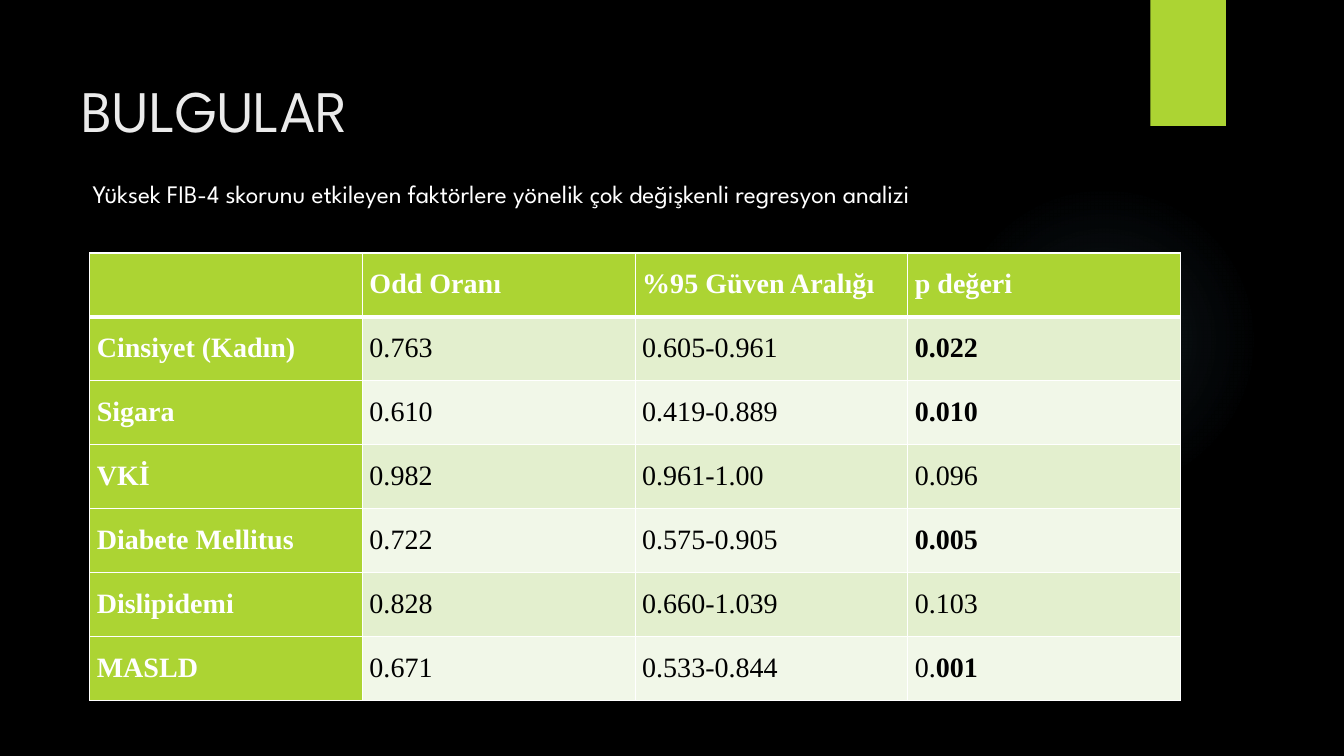
import pptx
import pptx.util
import pptx.dml.color
import pptx.enum.shapes
import pptx.enum.text
import pptx.oxml
import pptx.oxml.ns

Inches = pptx.util.Inches
SHAPES = pptx.enum.shapes.MSO_SHAPE
ALIGN = pptx.enum.text.PP_ALIGN
ANCHOR = pptx.enum.text.MSO_ANCHOR
NS = pptx.oxml.ns.nsdecls("a")

COLORS = {
    "back": "000000",
    "lime": "ACD433",
    "glow": "7AC4F0",
    "title": "EBEBEB",
    "white": "FFFFFF",
    "ink": "000000",
    "odd": "E3EFCE",
    "even": "F1F7E8",
}
SANS = "League Spartan"
SERIF = "Times New Roman"

HEAD = ["", "Odd Oranı", "%95 Güven Aralığı", "p değeri"]
ROWS = [
    ["Cinsiyet (Kadın)", "0.763", "0.605-0.961", "*0.022"],
    ["Sigara", "0.610", "0.419-0.889", "*0.010"],
    ["VKİ", "0.982", "0.961-1.00", "0.096"],
    ["Diabete Mellitus", "0.722", "0.575-0.905", "*0.005"],
    ["Dislipidemi", "0.828", "0.660-1.039", "0.103"],
    ["MASLD", "0.671", "0.533-0.844", "0.*001"],
]


def color(name):
    return pptx.dml.color.RGBColor.from_string(COLORS[name])


def write(frame, text, font=SANS, size=18, ink="white", bold=False,
          align=ALIGN.LEFT, line=None):
    para = frame.paragraphs[0]
    para.alignment = align
    if line:
        para.line_spacing = line
    for pos, part in enumerate(text.split("*")):
        if part:
            run = para.add_run()
            run.text = part
            run.font.name = font
            run.font.size = pptx.util.Pt(size)
            run.font.bold = bold or pos > 0
            run.font.color.rgb = color(ink)


def add_shape(slide, kind, box):
    shape = slide.shapes.add_shape(kind, *map(Inches, box))
    shape.shadow.inherit = False
    shape.line.fill.background()
    return shape


def add_glow(slide, box):
    glow = add_shape(slide, SHAPES.OVAL, box)
    glow.fill.background()
    stops = "".join(
        f'<a:gs pos="{pos * 1000}"><a:srgbClr val="{COLORS["glow"]}">'
        f'<a:alpha val="{alpha * 1000}"/></a:srgbClr></a:gs>'
        for pos, alpha in [(0, 7), (36, 6), (69, 0), (100, 0)])
    grad = pptx.oxml.parse_xml(
        f'<a:gradFill {NS}><a:gsLst>{stops}</a:gsLst><a:path path="circle">'
        '<a:fillToRect l="50000" t="50000" r="50000" b="50000"/>'
        '</a:path></a:gradFill>')
    props = glow.element.spPr
    props.replace(props.find(pptx.oxml.ns.qn("a:noFill")), grad)


def add_tab(slide, box):
    tab = add_shape(slide, SHAPES.RECTANGLE, box)
    tab.fill.solid()
    tab.fill.fore_color.rgb = color("lime")


def add_title(slide, box):
    title = slide.shapes.title
    title.left, title.top, title.width, title.height = map(Inches, box)
    frame = title.text_frame
    frame.auto_size = pptx.enum.text.MSO_AUTO_SIZE.NONE
    frame.vertical_anchor = ANCHOR.TOP
    frame.margin_top = Inches(0.23)
    write(frame, "BULGULAR", size=42, ink="title")


def add_lead(slide, box):
    frame = slide.shapes.add_textbox(*map(Inches, box)).text_frame
    frame.word_wrap = True
    write(frame, "Yüksek FIB-4 skorunu etkileyen faktörlere yönelik "
                 "çok değişkenli regresyon analizi")


def add_edges(cell, top, base):
    props = cell._tc.get_or_add_tcPr()
    widths = [("L", 1), ("R", 1), ("T", top), ("B", base)]
    for pos, (side, width) in enumerate(widths):
        props.insert(pos, pptx.oxml.parse_xml(
            f'<a:ln{side} {NS} w="{pptx.util.Pt(width)}"><a:solidFill>'
            f'<a:srgbClr val="{COLORS["white"]}"/></a:solidFill></a:ln{side}>'))


def add_grid(slide, box):
    data = [HEAD] + ROWS
    table = slide.shapes.add_table(
        len(data), len(HEAD), *map(Inches, box)).table
    for r, row in enumerate(data):
        for c, text in enumerate(row):
            cell = table.cell(r, c)
            label = r == 0 or c == 0
            band = "odd" if r % 2 else "even"
            cell.fill.solid()
            cell.fill.fore_color.rgb = color("lime" if label else band)
            cell.margin_left = cell.margin_right = Inches(0.07)
            cell.margin_top = cell.margin_bottom = 0
            cell.vertical_anchor = ANCHOR.TOP
            add_edges(cell, 3 if r == 1 else 1, 3 if r == 0 else 1)
            write(cell.text_frame, text, font=SERIF, size=20,
                  ink="white" if label else "ink", bold=label,
                  align=ALIGN.JUSTIFY, line=1.5)


def main():
    deck = pptx.Presentation()
    deck.slide_width = Inches(13.33)
    deck.slide_height = Inches(7.5)
    slide = deck.slides.add_slide(deck.slide_layouts[5])
    slide.background.fill.solid()
    slide.background.fill.fore_color.rgb = color("back")
    add_glow(slide, (9.41, 1.83, 3.08, 3.08))
    add_tab(slide, (11.41, 0, 0.75, 1.25))
    add_title(slide, (0.71, 0.5, 10.29, 1.53))
    add_lead(slide, (0.82, 1.72, 11.43, 0.4))
    add_grid(slide, (0.89, 2.51, 10.82, 4.44))
    deck.save("out.pptx")


if __name__ == "__main__":
    main()
